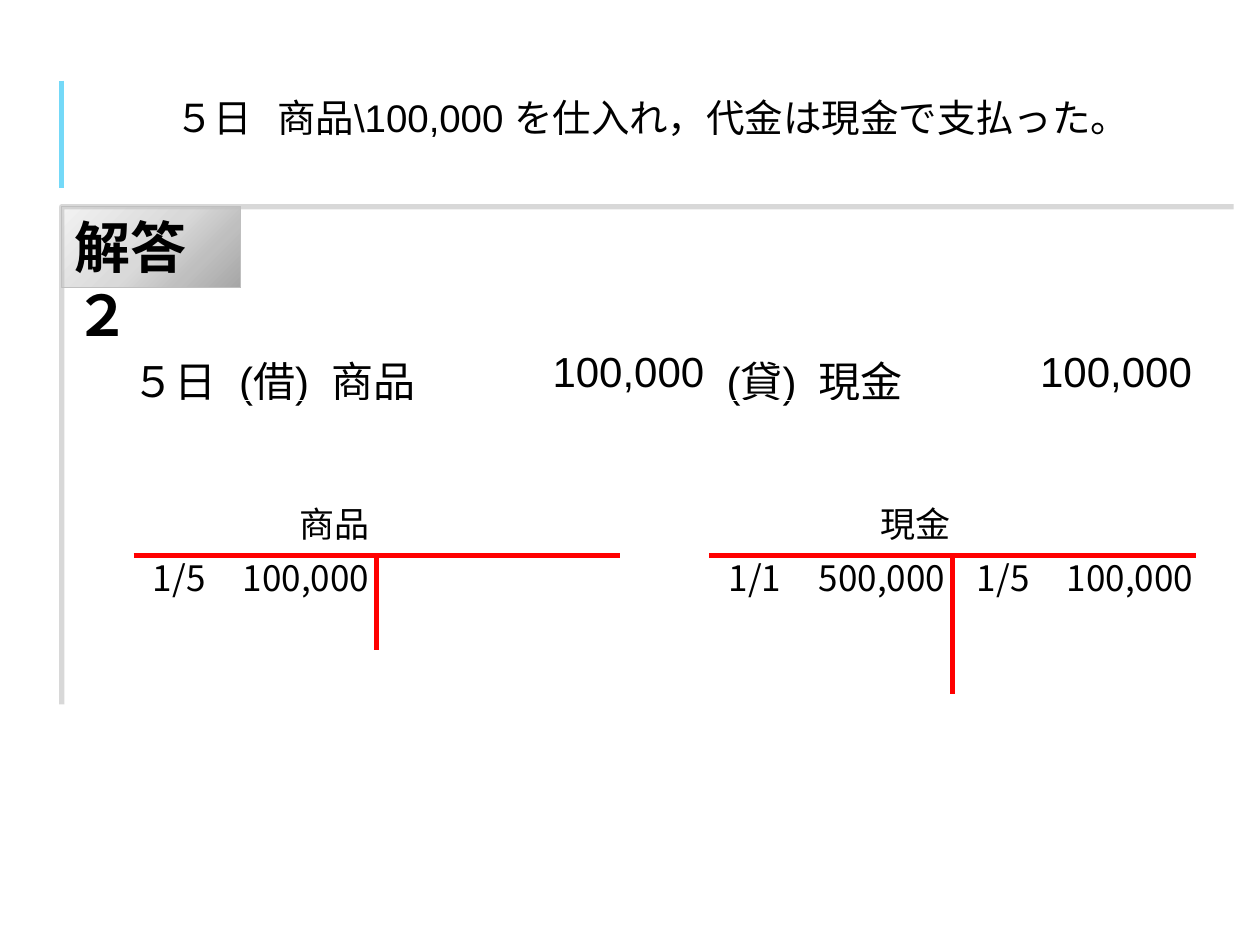
from dataclasses import dataclass

from lxml import etree
from pptx import Presentation
from pptx.dml.color import RGBColor
from pptx.enum.shapes import MSO_CONNECTOR, MSO_SHAPE
from pptx.enum.text import MSO_ANCHOR, MSO_AUTO_SIZE, PP_ALIGN
from pptx.oxml.ns import qn
from pptx.util import Inches, Pt

LEFT, RIGHT = PP_ALIGN.LEFT, PP_ALIGN.RIGHT
MID, JUST = PP_ALIGN.CENTER, PP_ALIGN.JUSTIFY
TOP = MSO_ANCHOR.TOP
GROW = MSO_AUTO_SIZE.SHAPE_TO_FIT_TEXT
RECT = MSO_SHAPE.RECTANGLE
LINE = MSO_CONNECTOR.STRAIGHT


@dataclass(frozen=True)
class Theme:
    ink: str = "000000"
    rule: str = "FF0000"
    bar: str = "74D9F8"
    edge: str = "BFBFBF"
    fade: tuple = ((0, "F2F2F2"), (51, "D9D9D9"), (75, "BFBFBF"), (100, "A6A6A6"))
    body: str = "Arial"
    head: str = "Calibri"
    book: str = "Noto Sans CJK JP"
    tag: int = 32
    entry: int = 24
    task: int = 22
    ledger: int = 20
    thick: float = 3
    thin: float = 0.75


THEME = Theme()


def write(frame, text, font, size, align, bold=False):
    para = frame.paragraphs[0]
    para.text = text
    para.alignment = align
    para.font.name = font
    para.font.size = Pt(size)
    para.font.bold = bold
    para.font.color.rgb = RGBColor.from_string(THEME.ink)


def add_text(slide, left, top, width, text, align):
    box = slide.shapes.add_textbox(
        Inches(left), Inches(top), Inches(width), Inches(0.44))
    box.text_frame.word_wrap = True
    box.text_frame.auto_size = GROW
    write(box.text_frame, text, THEME.book, THEME.ledger, align)


def add_line(slide, start, end, color):
    line = slide.shapes.add_connector(LINE, *map(Inches, start + end))
    line.line.color.rgb = RGBColor.from_string(color)
    line.line.width = Pt(THEME.thick)
    etree.SubElement(line._element.spPr, qn("a:effectLst"))


def add_row(slide, left, top, cols, cells, size, inset=None):
    shape = slide.shapes.add_table(
        1, len(cols), Inches(left), Inches(top), Inches(sum(cols)), Inches(0.41))
    table = shape.table
    table.first_row = table.horz_banding = False
    for i, (width, (text, align)) in enumerate(zip(cols, cells)):
        table.columns[i].width = Inches(width)
        cell = table.cell(0, i)
        cell.fill.background()
        cell.vertical_anchor = TOP
        if inset is not None:
            cell.margin_left = cell.margin_right = Inches(inset)
            cell.margin_top = cell.margin_bottom = Inches(inset)
        write(cell.text_frame, text, THEME.body, size, align)


def add_tag(slide, left, top, text):
    tag = slide.shapes.add_shape(
        RECT, Inches(left), Inches(top), Inches(1.42), Inches(0.64))
    tag.shadow.inherit = False
    tag.fill.gradient()
    tag.fill.gradient_angle = 315
    stops = tag._element.spPr.find(".//" + qn("a:gsLst"))
    for stop in list(stops):
        stops.remove(stop)
    for place, color in THEME.fade:
        stop = etree.SubElement(stops, qn("a:gs"), pos=str(place * 1000))
        etree.SubElement(stop, qn("a:srgbClr"), val=color)
    tag.line.color.rgb = RGBColor.from_string(THEME.edge)
    tag.line.width = Pt(THEME.thin)
    frame = tag.text_frame
    frame.word_wrap = True
    frame.vertical_anchor = TOP
    write(frame, text, THEME.head, THEME.tag, LEFT, bold=True)


def add_frame(slide, left, top, right, bottom):
    pen = slide.shapes.build_freeform(Inches(left), Inches(bottom))
    pen.add_line_segments(
        [(Inches(left), Inches(top)), (Inches(right), Inches(top))], close=False)
    frame = pen.convert_to_shape()
    frame.shadow.inherit = False
    frame.fill.background()
    frame.line.color.rgb = RGBColor.from_string(THEME.edge)
    frame.line.width = Pt(THEME.thick)
    color = frame._element.spPr.find(qn("a:ln")).find(".//" + qn("a:srgbClr"))
    etree.SubElement(color, qn("a:alpha"), val="60000")


def add_ledger(slide, left, shift, name, depth, items):
    top, half = 4.41, 1.93
    add_text(slide, left + shift, 3.94, 1.42, name, JUST)
    add_line(slide, (left, top), (left + 2 * half, top), THEME.rule)
    add_line(slide, (left + half, top), (left + half, top + depth), THEME.rule)
    for i, (date, sum_) in enumerate(items):
        start = left - 0.12 + i * 1.97
        add_text(slide, start, 4.37, 0.79, date, RIGHT)
        add_text(slide, start + 0.75, 4.37, 1.34, sum_, RIGHT)


def main():
    deck = Presentation()
    deck.slide_width, deck.slide_height = Inches(10), Inches(7.5)
    slide = deck.slides.add_slide(deck.slide_layouts[6])
    edge = 0.49
    add_tag(slide, edge, 1.64, "解答２　")
    add_frame(slide, edge, 1.64, 9.79, 5.59)
    task = [("５日", RIGHT), ("商品\\100,000 を仕入れ，代金は現金で支払った。", LEFT)]
    add_row(slide, edge, 0.65, [1.61, 7.05], task, THEME.task)
    add_line(slide, (edge, 0.64), (edge, 1.49), THEME.bar)
    add_ledger(slide, 5.63, 1.26, "現金", 1.1,
               [("1/1", "500,000"), ("1/5", "100,000")])
    add_ledger(slide, 1.06, 1.22, "商品", 0.75, [("1/5", "100,000")])
    entry = [("５日", RIGHT)]
    for side, name in (("(借)", "商品"), ("(貸)", "現金")):
        entry += [(side, MID), (name, JUST), ("100,000", RIGHT)]
    cols = [0.98] + [0.91, 1.5, 1.46] * 2
    add_row(slide, 0.74, 2.77, cols, entry, THEME.entry, inset=0)
    deck.save("out.pptx")


if __name__ == "__main__":
    main()
